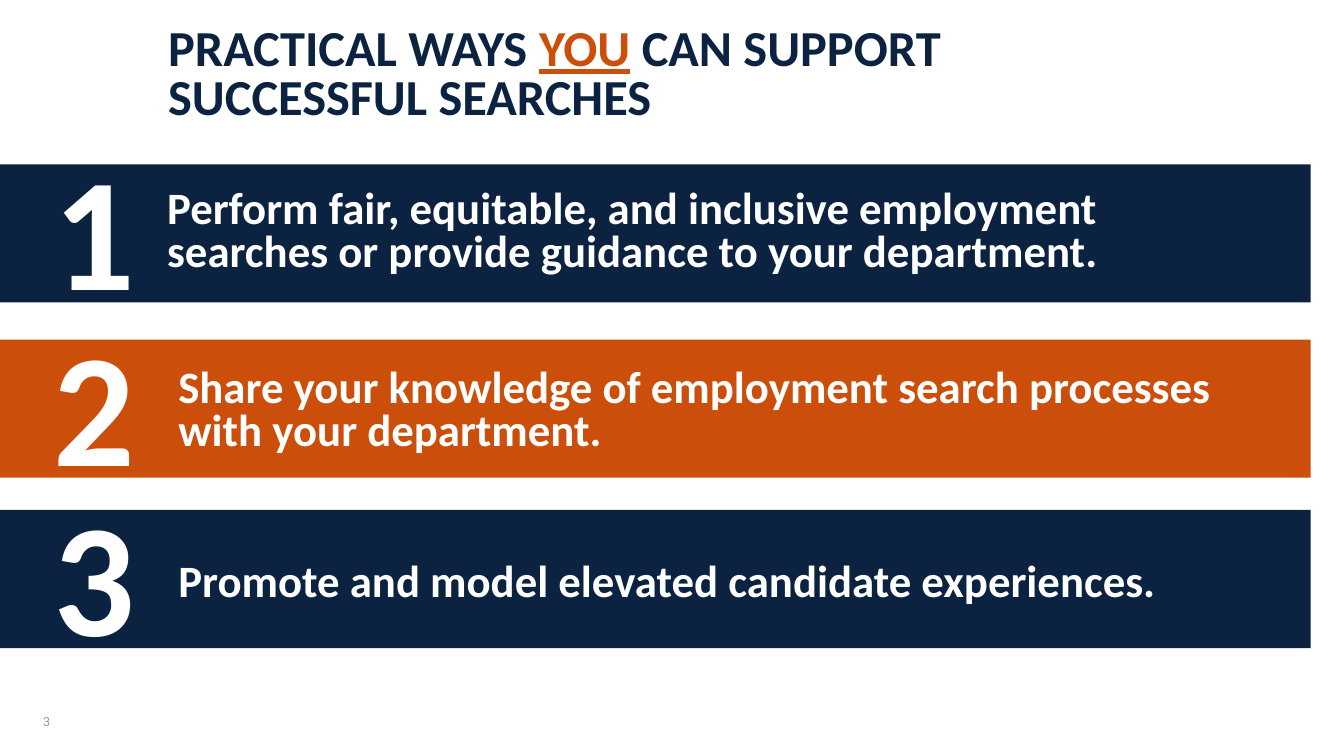
import pptx
import pptx.util
import pptx.dml.color
import pptx.enum.shapes
import pptx.enum.text

COLOURS = {"navy": "0B2341", "orange": "CC4E0B", "white": "FFFFFF", "grey": "999999"}
SCALE = 9144  # EMU per px, 100 px to the inch


class Slide:
    """Holds the style and the current page."""

    def __init__(self, deck, font):
        self.page = deck.slides.add_slide(deck.slide_layouts[6])
        self.font = font

    def lengths(self, *pixels):
        return [pptx.util.Emu(value * SCALE) for value in pixels]

    def colour(self, name):
        return pptx.dml.color.RGBColor.from_string(COLOURS[name])

    def band(self, left, top, width, height, fill):
        band = self.page.shapes.add_shape(
            pptx.enum.shapes.MSO_SHAPE.RECTANGLE, *self.lengths(left, top, width, height))
        band.shadow.inherit = False
        band.fill.solid()
        band.fill.fore_color.rgb = self.colour(fill)
        band.line.fill.background()

    def text(self, left, top, width, height, paragraphs, size, bold=True,
             spacing=0.8, font=None, middle=False):
        """Each paragraph is a list of (words, colour, underlined) runs."""
        box = self.page.shapes.add_textbox(*self.lengths(left, top, width, height))
        frame = box.text_frame
        frame.word_wrap = True
        anchors = pptx.enum.text.MSO_ANCHOR
        frame.vertical_anchor = anchors.MIDDLE if middle else anchors.TOP
        for index, runs in enumerate(paragraphs):
            para = frame.add_paragraph() if index else frame.paragraphs[0]
            para.line_spacing = spacing
            for words, colour, underlined in runs:
                span = para.add_run()
                span.text = words
                span.font.name = font or self.font
                span.font.size = pptx.util.Pt(size)
                span.font.bold = bold
                span.font.underline = underlined
                span.font.color.rgb = self.colour(colour)


def main():
    deck = pptx.Presentation()
    deck.slide_width = pptx.util.Inches(13.33)
    deck.slide_height = pptx.util.Inches(7.5)
    slide = Slide(deck, "Calibri")

    # Heading
    slide.text(157, 23, 1153, 132, [
        [("PRACTICAL WAYS ", "navy", False), ("YOU", "orange", True),
         (" CAN SUPPORT", "navy", False)],
        [("SUCCESSFUL SEARCHES", "navy", False)],
    ], 36)

    # Numbered bands: band top, fill, text left, text top, words
    ways = [
        (163, "navy", 156, 184, "Perform fair, equitable, and inclusive employment "
                                "searches or provide guidance to your department."),
        (337, "orange", 167, 361, "Share your knowledge of employment search processes "
                                  "with your department."),
        (506, "navy", 167, 554, "Promote and model elevated candidate experiences."),
    ]
    for number, (top, fill, text_left, text_top, words) in enumerate(ways, 1):
        slide.band(0, top, 1300, 137, fill)
        slide.text(43, top - 2, 166, 73, [[(str(number), "white", False)]], 115)
        slide.text(text_left, text_top, 1093, 73, [[(words, "white", False)]], 32)

    # Page number
    slide.text(33, 696, 43, 40, [[("3", "grey", False)]], 9, bold=False,
               spacing=1.0, font="Roboto", middle=True)

    deck.save("out.pptx")


if __name__ == "__main__":
    main()
